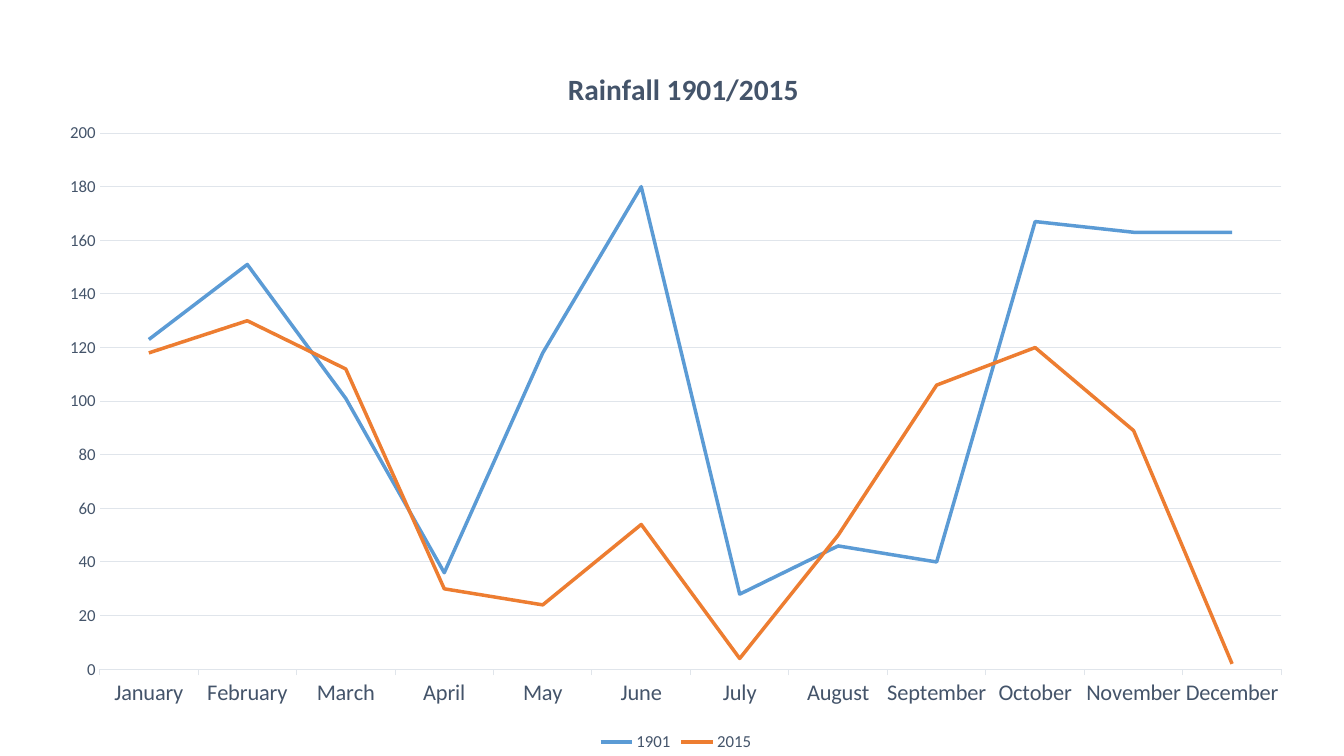
from lxml import etree
from pptx import Presentation
from pptx import util as u
from pptx.chart.data import CategoryChartData
from pptx.dml.color import RGBColor
from pptx.enum import chart as ch
from pptx.oxml.ns import qn

FONT = "Calibri"
SLATE = "44546A"
PALE = "E0E5EB"
MONTHS = ["January", "February", "March", "April", "May", "June", "July",
          "August", "September", "October", "November", "December"]
RAINFALL = {
    "1901": ("5B9BD5", [123, 151, 101, 36, 118, 180, 28, 46, 40, 167, 163, 163]),
    "2015": ("ED7D31", [118, 130, 112, 30, 24, 54, 4, 50, 106, 120, 89, 2]),
}


def colour(value):
    return RGBColor.from_string(value)


def style_font(font, size, bold=False):
    font.name = FONT
    font.size = u.Pt(size)
    font.bold = bold
    font.color.rgb = colour(SLATE)


def style_line(line, value, width):
    line.color.rgb = colour(value)
    line.width = u.Pt(width)


def manual_layout(**settings):
    layout = etree.Element(qn("c:layout"))
    manual = etree.SubElement(layout, qn("c:manualLayout"))
    for name, value in settings.items():
        etree.SubElement(manual, qn(f"c:{name}")).set("val", str(value))
    return layout


def add_rainfall_chart(page):
    data = CategoryChartData()
    data.categories = MONTHS
    for year, (_, values) in RAINFALL.items():
        data.add_series(year, values)
    frame = page.shapes.add_chart(
        ch.XL_CHART_TYPE.LINE, u.Inches(0.45), u.Inches(0.34),
        u.Inches(12.51), u.Inches(7.16), data)
    chart = frame.chart
    style_font(chart.font, 12)
    chart.plots[0].vary_by_categories = False
    for series, (shade, _) in zip(chart.plots[0].series, RAINFALL.values()):
        series.smooth = False
        series.marker.style = ch.XL_MARKER_STYLE.NONE
        style_line(series.format.line, shade, 2.5)
    return chart


def format_title(chart):
    chart.has_title = True
    title = chart.chart_title
    title.include_in_layout = False
    para = title.text_frame.paragraphs[0]
    para.text = "Rainfall 1901/2015"
    style_font(para.runs[0].font, 21, bold=True)
    element = chart.element.find(".//" + qn("c:title"))
    for layout in element.findall(qn("c:layout")):
        element.remove(layout)
    element.find(qn("c:tx")).addnext(
        manual_layout(xMode="edge", yMode="edge", x=0.41, y=0.04))


def format_axes(chart):
    months, amounts = chart.category_axis, chart.value_axis
    style_font(months.tick_labels.font, 16)
    style_line(months.format.line, PALE, 0.75)
    months.major_tick_mark = ch.XL_TICK_MARK.OUTSIDE
    style_font(amounts.tick_labels.font, 12)
    amounts.format.line.fill.background()
    amounts.major_tick_mark = ch.XL_TICK_MARK.NONE
    amounts.minimum_scale, amounts.maximum_scale = 0, 200
    amounts.major_unit = 20
    amounts.has_major_gridlines = True
    style_line(amounts.major_gridlines.format.line, PALE, 0.75)


def format_plot_area(chart):
    area = chart.element.find(".//" + qn("c:plotArea"))
    for layout in area.findall(qn("c:layout")):
        area.remove(layout)
    area.insert(0, manual_layout(
        layoutTarget="inner", xMode="edge", yMode="edge",
        x=0.043, y=0.137, w=0.937, h=0.743))


def format_legend(chart):
    chart.has_legend = True
    chart.legend.position = ch.XL_LEGEND_POSITION.BOTTOM
    chart.legend.include_in_layout = False
    style_font(chart.legend.font, 12)


def main():
    deck = Presentation()
    deck.slide_width = u.Inches(13.33)
    deck.slide_height = u.Inches(7.5)
    page = deck.slides.add_slide(deck.slide_layouts[6])
    chart = add_rainfall_chart(page)
    format_title(chart)
    format_axes(chart)
    format_plot_area(chart)
    format_legend(chart)
    deck.save("out.pptx")


if __name__ == "__main__":
    main()
